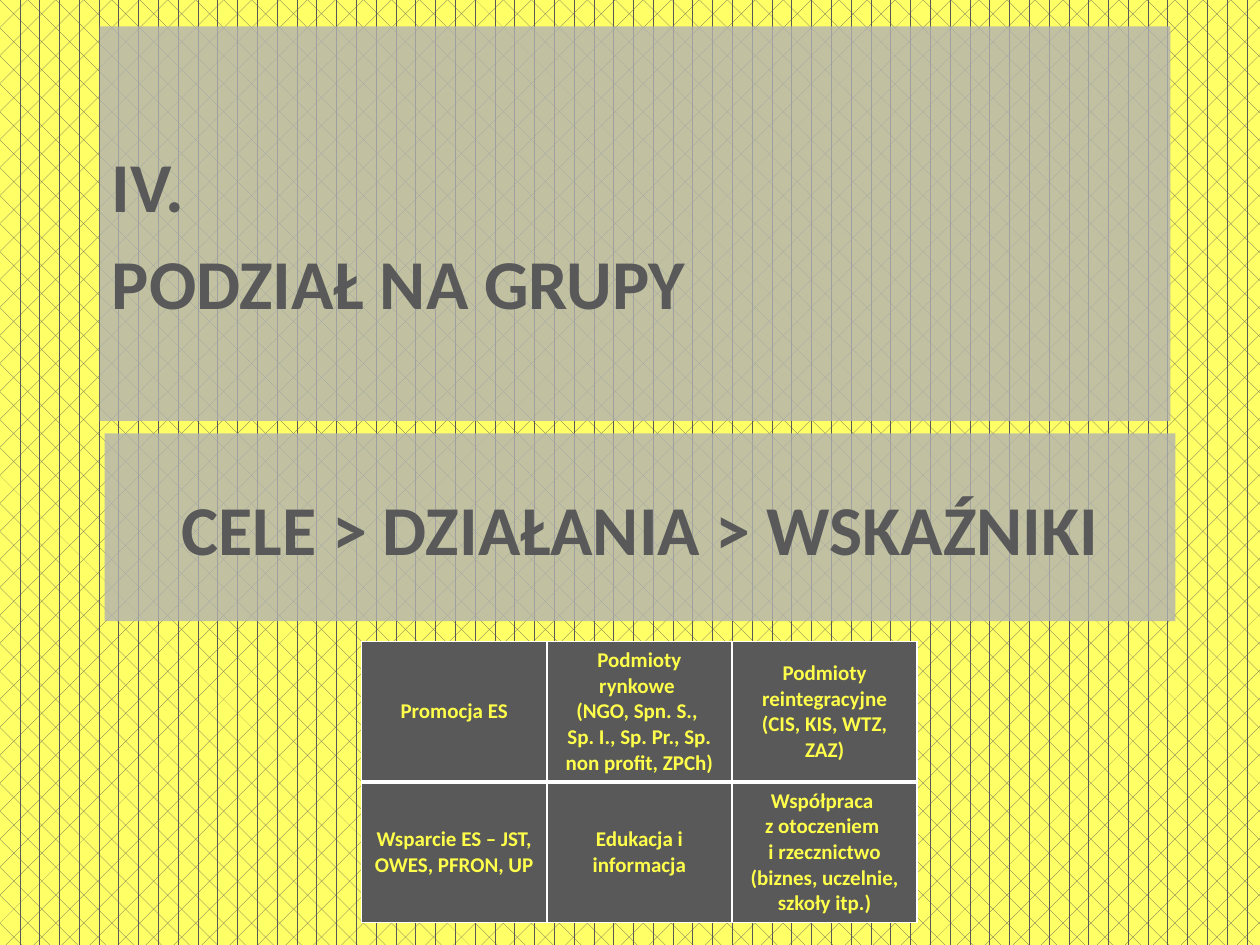
from lxml.etree import SubElement
from pptx import Presentation
from pptx.dml.color import RGBColor
from pptx.enum.dml import MSO_PATTERN
from pptx.enum.shapes import MSO_SHAPE
from pptx.enum.text import MSO_ANCHOR, PP_ALIGN
from pptx.oxml.ns import qn
from pptx.util import Inches, Pt

GRAY, YELLOW, WHITE = "595959", "FFFF4B", "FFFFFF"


def color(hex_string):
    return RGBColor.from_string(hex_string)


def write(paragraph, text, size, hex_string, align):
    paragraph.alignment = align
    for number, line in enumerate(text.split("\n")):
        if number:
            paragraph.add_line_break()
        run = paragraph.add_run()
        run.text = line
        run.font.name = "Calibri"
        run.font.size = Pt(size)
        run.font.bold = True
        run.font.color.rgb = color(hex_string)


deck = Presentation()
deck.slide_width, deck.slide_height = Inches(10), Inches(7.5)
slide = deck.slides.add_slide(deck.slide_layouts[6])

# Patterned background
backdrop = slide.background.fill
backdrop.patterned()
backdrop.pattern = MSO_PATTERN.DIVOT
backdrop.fore_color.rgb = color(GRAY)
backdrop.back_color.rgb = color("FFFF66")

# Translucent heading bands: text, left, top, height, anchor, alignment
bands = [
    ("PODZIAŁ NA GRUPY", 0.79, 1.85, 1.49, MSO_ANCHOR.TOP, PP_ALIGN.LEFT),
    ("IV.", 0.79, 0.21, 1.64, MSO_ANCHOR.BOTTOM, PP_ALIGN.LEFT),
    ("CELE > DZIAŁANIA > WSKAŹNIKI", 0.83, 3.44, 1.49, MSO_ANCHOR.MIDDLE, PP_ALIGN.CENTER),
]
for text, left, top, height, anchor, align in bands:
    band = slide.shapes.add_shape(
        MSO_SHAPE.RECTANGLE, Inches(left), Inches(top), Inches(8.5), Inches(height))
    band.shadow.inherit = False
    band.line.fill.background()
    band.fill.solid()
    band.fill.fore_color.rgb = color("B2B2B2")
    tint = band.fill._xPr.find(".//" + qn("a:srgbClr"))
    SubElement(tint, qn("a:alpha"), val="80000")
    band.text_frame.word_wrap = True
    band.text_frame.vertical_anchor = anchor
    write(band.text_frame.paragraphs[0], text, 40, GRAY, align)

# Table of working groups
groups = [
    ["Promocja ES",
     "Podmioty rynkowe \n(NGO, Spn. S., \nSp. I., Sp. Pr., Sp. non profit, ZPCh)",
     "Podmioty reintegracyjne (CIS, KIS, WTZ, ZAZ)"],
    ["Wsparcie ES – JST, OWES, PFRON, UP",
     "Edukacja i informacja",
     "Współpraca \nz otoczeniem \ni rzecznictwo (biznes, uczelnie, szkoły itp.)"],
]
column_width, row_height = 1.47, 1.1
table = slide.shapes.add_table(
    2, 3, Inches(2.87), Inches(5.09),
    Inches(3 * column_width), Inches(2 * row_height)).table
for row, names in enumerate(groups):
    for column, name in enumerate(names):
        cell = table.cell(row, column)
        cell.vertical_anchor = MSO_ANCHOR.MIDDLE
        write(cell.text_frame.paragraphs[0], name, 12, YELLOW, PP_ALIGN.CENTER)

        # White borders, with a thick rule between the two rows
        properties = cell._tc.get_or_add_tcPr()
        for side in "LRTB":
            divider = (row, side) in ((0, "B"), (1, "T"))
            border = SubElement(properties, qn("a:ln" + side), w=str(Pt(3 if divider else 1)))
            paint = SubElement(border, qn("a:solidFill"))
            SubElement(paint, qn("a:srgbClr"), val=WHITE)
        cell.fill.solid()
        cell.fill.fore_color.rgb = color(GRAY)

deck.save("out.pptx")
